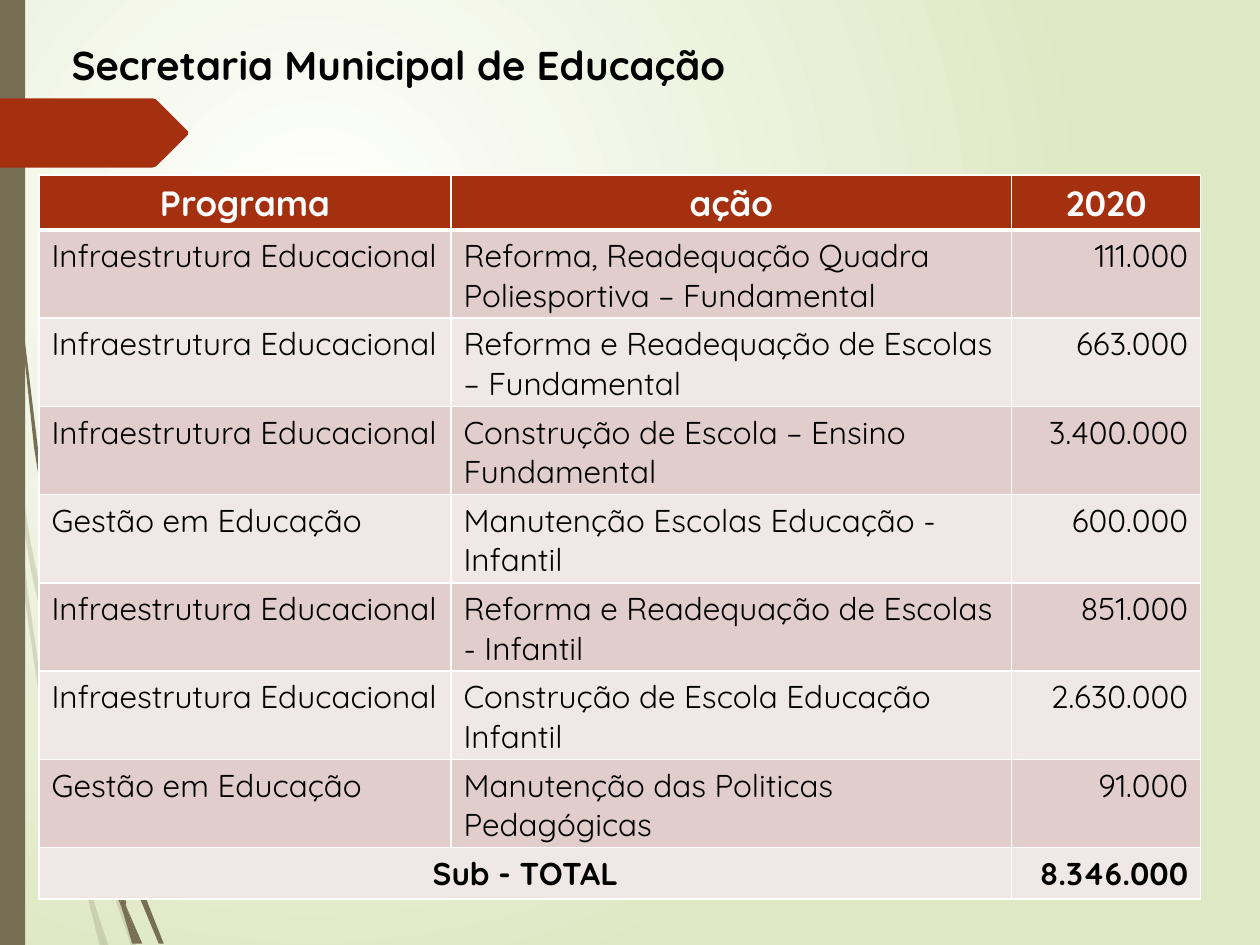
from pptx import Presentation
from pptx.dml.color import RGBColor
from pptx.enum.shapes import MSO_SHAPE
from pptx.enum.text import MSO_AUTO_SIZE, PP_ALIGN
from pptx.oxml import parse_xml
from pptx.oxml.ns import nsdecls, qn
from pptx.util import Inches, Pt

COLORS = {
    "white": "FFFFFF", "meadow": "DFE8C4", "stem": "766F54", "accent": "A53010",
    "black": "000000", "band_dark": "E1CDCC", "band_light": "F0E8E7",
}

FORMATS = {
    "title": {"name": "Quicksand", "size": Pt(23), "bold": True},
    "header": {"name": "Quicksand", "size": Pt(20), "bold": True},
    "body": {"name": "Quicksand", "size": Pt(18), "bold": False},
    "total": {"name": "Quicksand", "size": Pt(18), "bold": True},
}

PALE_STEMS = [
    [(8, 350), (6, 322), (0, 282), (0, 299), (7, 344)],
    [(40, 522), (59, 599), (59, 586), (43, 520), (25, 434), (10, 345), (12, 376), (24, 450)],
    [(64, 607), (61, 596), (61, 610), (85, 694), (104, 750), (108, 750), (88, 692)],
    [(83, 750), (86, 750), (73, 711)],
    [(64, 683), (48, 619), (33, 545), (22, 469), (12, 376), (8, 350), (19, 470),
     (30, 546), (45, 621), (64, 693), (70, 714), (69, 707)],
    [(58, 599), (60, 646), (64, 683), (67, 692), (73, 711), (72, 706), (63, 646),
     (61, 610), (61, 608)],
    [(61, 584), (66, 522), (76, 462), (92, 404), (111, 349), (134, 295), (159, 245),
     (187, 198), (201, 175), (217, 154), (217, 153), (201, 175), (186, 197), (158, 244),
     (133, 294), (110, 348), (91, 403), (75, 461), (64, 522), (59, 584), (59, 586), (61, 596)],
    [(70, 714), (79, 750), (82, 750)],
    [(61, 608), (61, 610), (61, 596), (59, 586), (58, 599)],
    [(67, 692), (65, 683), (69, 707), (70, 714), (82, 750), (83, 750), (73, 711)],
]

DARK_STEMS = [
    [(5, 110), (14, 233), (27, 355), (46, 477), (47, 481), (45, 457), (45, 453),
     (30, 355), (15, 232), (6, 109), (4, 48), (3, 0), (2, 0), (3, 48)],
    [(73, 592), (88, 645), (88, 633), (88, 631), (77, 590), (62, 532), (50, 472),
     (53, 505), (62, 549)],
    [(94, 649), (91, 641), (91, 656), (109, 708), (126, 749), (130, 749), (113, 706)],
    [(91, 691), (81, 657), (69, 607), (60, 556), (53, 505), (47, 477), (56, 557),
     (65, 608), (77, 659), (92, 708), (97, 722), (96, 717)],
    [(50, 472), (48, 453), (44, 349), (48, 245), (52, 193), (58, 141), (51, 193),
     (47, 245), (43, 349), (45, 449), (49, 472)],
    [(110, 749), (113, 749), (100, 719)],
    [(47, 477), (53, 505), (50, 472), (49, 472), (45, 449), (45, 453)],
    [(91, 633), (95, 592), (103, 552), (115, 513), (131, 476), (149, 440), (169, 406),
     (191, 374), (203, 359), (216, 344), (215, 344), (203, 358), (191, 373), (168, 405),
     (147, 439), (129, 474), (113, 511), (101, 551), (92, 591), (88, 631), (91, 641)],
    [(97, 722), (105, 749), (108, 749)],
    [(88, 645), (91, 691), (96, 706), (100, 719), (100, 716), (93, 686), (91, 656), (90, 651)],
    [(88, 645), (90, 651), (91, 656), (91, 641), (88, 631), (88, 633)],
    [(96, 706), (91, 691), (96, 717), (97, 722), (108, 749), (110, 749), (100, 719)],
]

PAGE_MARKER = [(0, 78), (121, 78), (124, 79), (149, 104), (149, 107), (124, 132),
               (121, 133), (0, 133)]

COLUMN_WIDTHS = [3.27, 4.45, 1.5]
ROW_HEIGHT = 0.41
INFRASTRUCTURE = "Infraestrutura Educacional"
MANAGEMENT = "Gestão em Educação"
BUDGET = [
    ("Programa", "ação", "2020"),
    (INFRASTRUCTURE, "Reforma, Readequação Quadra Poliesportiva – Fundamental", "111.000"),
    (INFRASTRUCTURE, "Reforma e Readequação de Escolas – Fundamental", "663.000"),
    (INFRASTRUCTURE, "Construção de Escola – Ensino Fundamental", "3.400.000"),
    (MANAGEMENT, "Manutenção Escolas Educação - Infantil", "600.000"),
    (INFRASTRUCTURE, "Reforma e Readequação de Escolas - Infantil", "851.000"),
    (INFRASTRUCTURE, "Construção de Escola Educação Infantil", "2.630.000"),
    (MANAGEMENT, "Manutenção das Politicas Pedagógicas", "91.000"),
    ("Sub - TOTAL", "", "8.346.000"),
]


class BudgetSlide:
    """Hold the style and the current slide, and draw each kind of element."""

    def __init__(self, slide):
        self.slide = slide

    def color(self, name):
        return RGBColor.from_string(COLORS[name])

    def background(self, center, edge):
        fill = self.slide.background.fill
        fill.gradient()
        for stop, name in zip(fill.gradient_stops, (center, edge)):
            stop.color.rgb = self.color(name)
        gradient = self.slide.element.find(".//" + qn("a:gradFill"))
        gradient.replace(gradient.find(qn("a:lin")), parse_xml(
            f'<a:path {nsdecls("a")} path="circle"><a:fillToRect l="50000" t="50000" '
            'r="100000" b="100000"/></a:path>'))

    def paint(self, shape, name, opacity=100):
        shape.shadow.inherit = False
        shape.fill.solid()
        shape.fill.fore_color.rgb = self.color(name)
        shape.line.fill.background()
        if opacity < 100:
            shade = shape.element.find(".//" + qn("a:srgbClr"))
            shade.append(parse_xml(f'<a:alpha {nsdecls("a")} val="{opacity * 1000}"/>'))

    def outline(self, shapes, points, name, opacity=100):
        builder = shapes.build_freeform(*points[0], scale=Inches(0.01))
        builder.add_line_segments(points[1:], close=True)
        self.paint(builder.convert_to_shape(), name, opacity)

    def stems(self, outlines, opacity=100):
        group = self.slide.shapes.add_group_shape()
        for points in outlines:
            self.outline(group.shapes, points, "stem", opacity)

    def bar(self, left, top, width, height, name):
        bounds = map(Inches, (left, top, width, height))
        self.paint(self.slide.shapes.add_shape(MSO_SHAPE.RECTANGLE, *bounds), name)

    def add_text(self, frame, text, style, name, align=None):
        paragraph = frame.paragraphs[0]
        paragraph.alignment = align
        run = paragraph.add_run()
        run.text = text
        for attribute, value in FORMATS[style].items():
            setattr(run.font, attribute, value)
        run.font.color.rgb = self.color(name)

    def title(self, left, top, width, height, text):
        frame = self.slide.shapes.add_textbox(*map(Inches, (left, top, width, height))).text_frame
        frame.word_wrap = True
        frame.auto_size = MSO_AUTO_SIZE.SHAPE_TO_FIT_TEXT
        self.add_text(frame, text, "title", "black")

    def borders(self, cell, **widths):
        for index, (side, width) in enumerate(widths.items()):
            cell._tc.get_or_add_tcPr().insert(index, parse_xml(
                f'<a:ln{side} {nsdecls("a")} w="{Pt(width)}"><a:solidFill>'
                f'<a:srgbClr val="{COLORS["white"]}"/></a:solidFill></a:ln{side}>'))

    def table(self, left, top, rows):
        last = len(rows) - 1
        grid = self.slide.shapes.add_table(
            len(rows), len(COLUMN_WIDTHS), Inches(left), Inches(top),
            Inches(sum(COLUMN_WIDTHS)), Inches(ROW_HEIGHT * len(rows))).table
        for column, width in zip(grid.columns, COLUMN_WIDTHS):
            column.width = Inches(width)
        for index, texts in enumerate(rows):
            grid.rows[index].height = Inches(ROW_HEIGHT)
            style = {0: "header", last: "total"}.get(index, "body")
            band = "accent" if index == 0 else ("band_light", "band_dark")[index % 2]
            ink = "white" if index == 0 else "black"
            lead = PP_ALIGN.LEFT if style == "body" else PP_ALIGN.CENTER
            amount = PP_ALIGN.CENTER if index == 0 else PP_ALIGN.RIGHT
            for cell, text, align in zip(grid.rows[index].cells, texts, (lead, lead, amount)):
                cell.fill.solid()
                cell.fill.fore_color.rgb = self.color(band)
                self.borders(cell, L=1, R=1, T=3 if index == 1 else 1, B=3 if index == 0 else 1)
                if text:
                    self.add_text(cell.text_frame, text, style, ink, align)
        grid.cell(last, 0).merge(grid.cell(last, 1))


def main():
    deck = Presentation()
    deck.slide_width, deck.slide_height = Inches(10), Inches(7.5)
    budget = BudgetSlide(deck.slides.add_slide(deck.slide_layouts[6]))
    budget.background("white", "meadow")
    budget.stems(PALE_STEMS, opacity=20)
    budget.stems(DARK_STEMS)
    budget.bar(0, 0, 0.2, 7.5, "stem")
    budget.outline(budget.slide.shapes, PAGE_MARKER, "accent")
    budget.title(0.47, 0.27, 8.44, 0.49, "Secretaria Municipal de Educação")
    budget.table(0.31, 1.39, BUDGET)
    deck.save("out.pptx")


if __name__ == "__main__":
    main()
